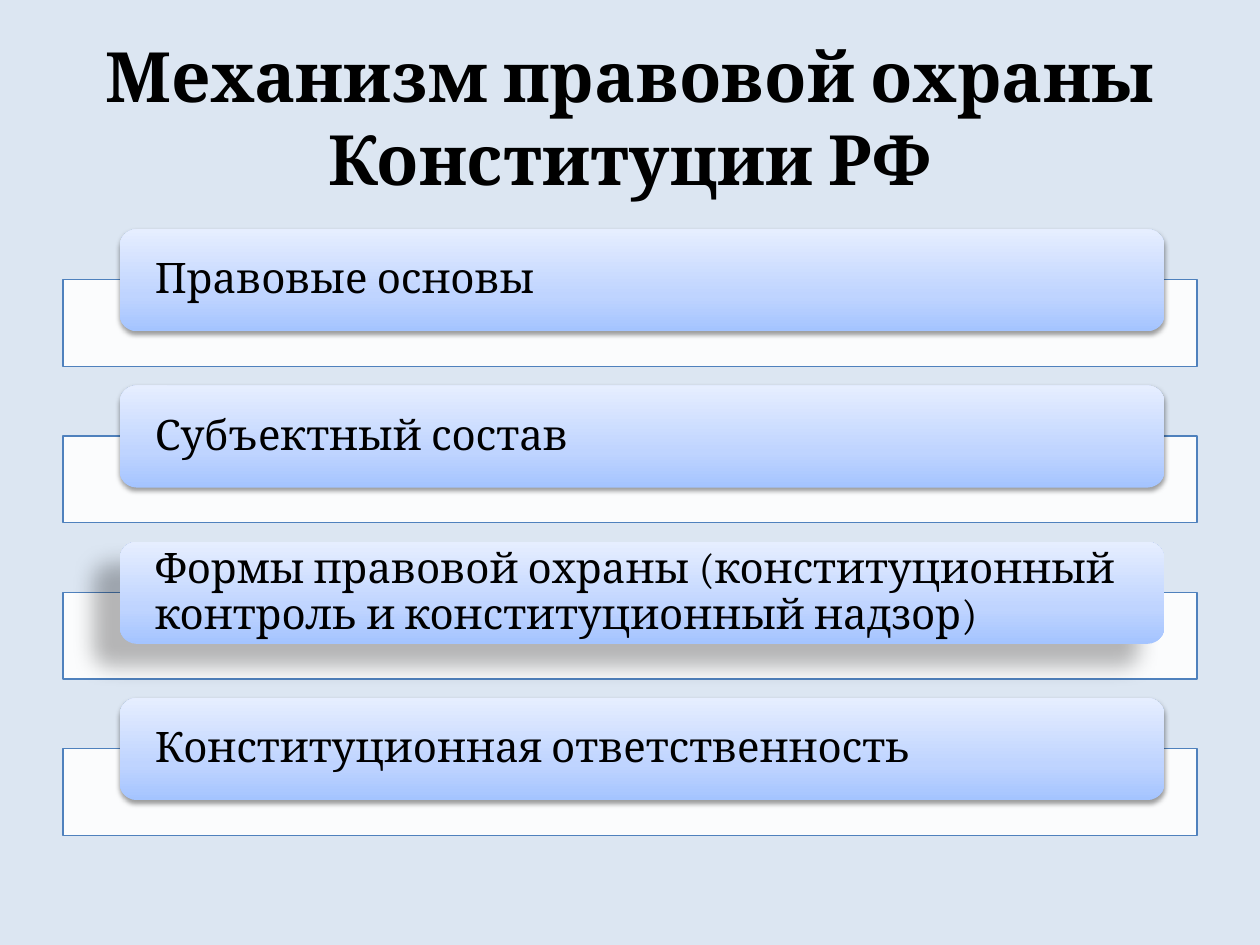
from lxml import etree
from pptx import Presentation
from pptx.dml.color import RGBColor
from pptx.enum.shapes import MSO_SHAPE
from pptx.enum.text import MSO_ANCHOR, PP_ALIGN
from pptx.oxml.ns import qn
from pptx.util import Pt

RECTANGLE, ROUNDED = MSO_SHAPE.RECTANGLE, MSO_SHAPE.ROUNDED_RECTANGLE
MIDDLE = MSO_ANCHOR.MIDDLE
LEFT, CENTER = PP_ALIGN.LEFT, PP_ALIGN.CENTER

BLACK = RGBColor(0x00, 0x00, 0x00)
WHITE = RGBColor(0xFF, 0xFF, 0xFF)
BACKGROUND = RGBColor(0xDC, 0xE6, 0xF2)
FRAME_BLUE = RGBColor(0x4F, 0x81, 0xBD)
LABEL_STOPS = [
    (0, RGBColor(0xA4, 0xC4, 0xFF)),
    (35, RGBColor(0xBF, 0xD4, 0xFF)),
    (100, RGBColor(0xE6, 0xEE, 0xFF)),
]

FONT = "Cambria"
FIRST_TOP = 131
ROW_PITCH = 89.3
FRAME_OFFSET = 28.8

SOFT_SHADOW = {"alpha": 38, "blur": 3.1, "distance": 1.6, "angle": 90}
DEEP_SHADOW = {"alpha": 28, "blur": 11.8, "distance": 19.7, "angle": 141}
ROWS = [
    ("Правовые основы", SOFT_SHADOW),
    ("Субъектный состав", SOFT_SHADOW),
    ("Формы правовой охраны (конституционный контроль и конституционный надзор)",
     DEEP_SHADOW),
    ("Конституционная ответственность", SOFT_SHADOW),
]


def add_color(parent, color, alpha=None):
    node = etree.SubElement(parent, qn("a:srgbClr"), val=str(color))
    if alpha is not None:
        etree.SubElement(node, qn("a:alpha"), val=str(alpha * 1000))


def set_gradient(shape, stops):
    """Fill the shape from bottom to top with (percent, colour) stops."""
    shape.fill.gradient()
    shape.fill.gradient_angle = 90
    stop_list = shape._element.spPr.find(qn("a:gradFill")).find(qn("a:gsLst"))
    for stop in list(stop_list):
        stop_list.remove(stop)
    for percent, color in stops:
        stop = etree.SubElement(stop_list, qn("a:gs"), pos=str(percent * 1000))
        add_color(stop, color)


def set_shadow(shape, alpha, blur, distance, angle):
    effects = shape._element.spPr.find(qn("a:effectLst"))
    shadow = etree.SubElement(
        effects, qn("a:outerShdw"), blurRad=str(Pt(blur)), dist=str(Pt(distance)),
        dir=str(angle * 60000), rotWithShape="0")
    add_color(shadow, BLACK, alpha)


def write_text(shape, text, size, bold=False, align=LEFT, spacing=None):
    frame = shape.text_frame
    frame.word_wrap = True
    frame.vertical_anchor = MIDDLE
    para = frame.paragraphs[0]
    para.alignment = align
    para.line_spacing = spacing
    span = para.add_run()
    span.text = text
    span.font.name = FONT
    span.font.size = Pt(size)
    span.font.bold = bold
    span.font.color.rgb = BLACK


def add_box(page, kind, left, top, width, height):
    box = page.shapes.add_shape(kind, Pt(left), Pt(top), Pt(width), Pt(height))
    box.shadow.inherit = False
    return box


def add_frame(page, top):
    frame = add_box(page, RECTANGLE, 36, top, 648, 49.6)
    frame.fill.solid()
    frame.fill.fore_color.rgb = WHITE
    fill_color = frame._element.spPr.find(qn("a:solidFill"))[0]
    etree.SubElement(fill_color, qn("a:alpha"), val="90000")
    frame.line.color.rgb = FRAME_BLUE
    frame.line.width = Pt(0.75)


def add_label(page, text, top, shadow):
    label = add_box(page, ROUNDED, 68.4, top, 597, 58.3)
    set_gradient(label, LABEL_STOPS)
    label.line.fill.background()
    set_shadow(label, **shadow)
    frame = label.text_frame
    frame.margin_left = frame.margin_right = Pt(17.2)
    frame.margin_top = frame.margin_bottom = Pt(0)
    write_text(label, text, 24, spacing=0.9)


def add_title(page, text):
    title = page.shapes.title
    title.left, title.top, title.width, title.height = Pt(36), Pt(21.6), Pt(648), Pt(90)
    write_text(title, text, 39.6, bold=True, align=CENTER)


def main():
    deck = Presentation()
    deck.slide_width, deck.slide_height = Pt(720), Pt(540)
    page = deck.slides.add_slide(deck.slide_layouts[5])
    page.background.fill.solid()
    page.background.fill.fore_color.rgb = BACKGROUND
    add_title(page, "Механизм правовой охраны Конституции РФ")
    for index, (text, shadow) in enumerate(ROWS):
        top = FIRST_TOP + index * ROW_PITCH
        add_frame(page, top + FRAME_OFFSET)
        add_label(page, text, top, shadow)
    deck.save("out.pptx")


if __name__ == "__main__":
    main()
